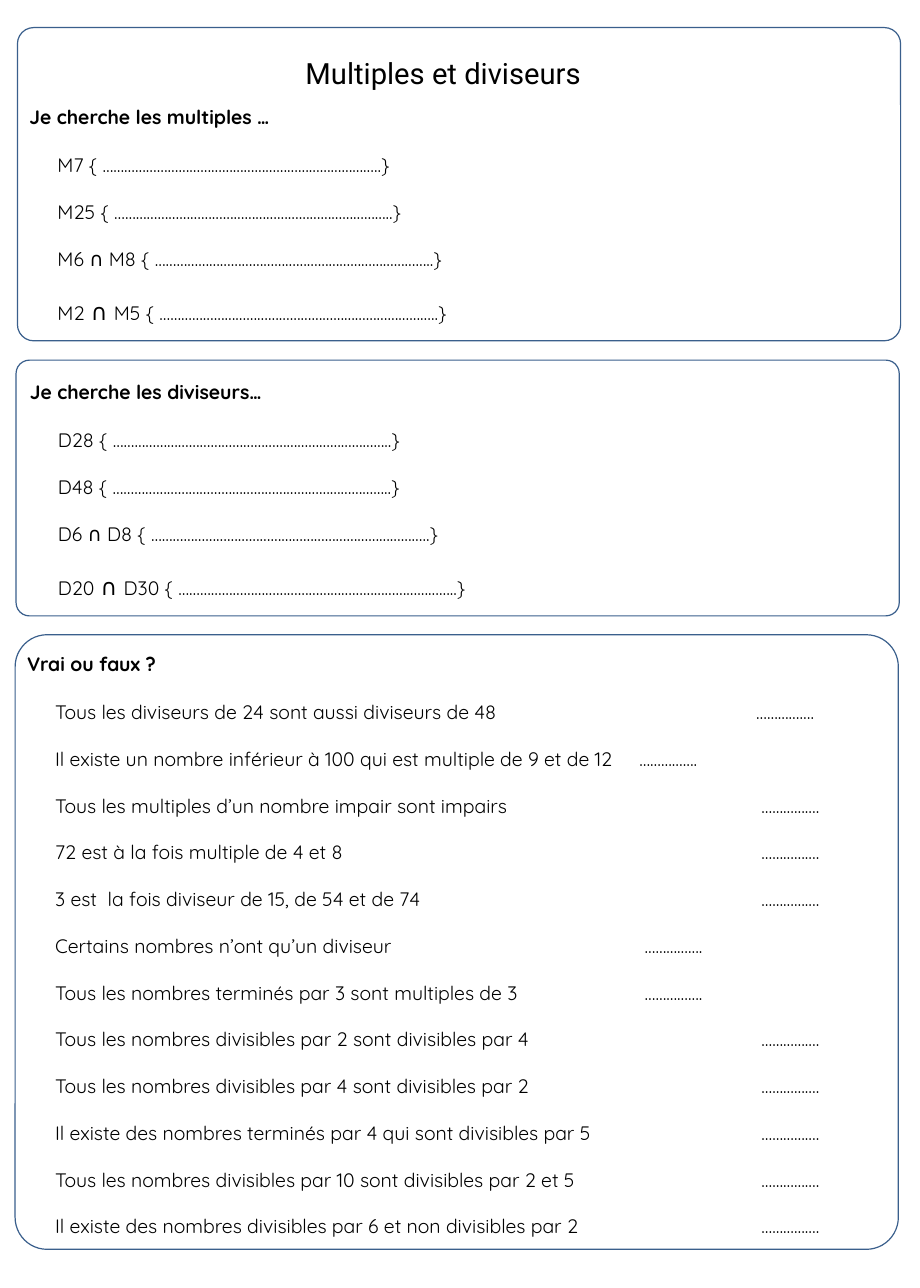
from dataclasses import dataclass

import pptx
import pptx.dml.color
import pptx.enum.shapes
import pptx.enum.text
import pptx.oxml
import pptx.oxml.ns
import pptx.slide
import pptx.text.text
import pptx.util
from pptx.util import Cm

BLACK = pptx.dml.color.RGBColor(0x00, 0x00, 0x00)
BLUE = pptx.dml.color.RGBColor(0x3A, 0x5F, 0x8C)
BODY_FONT = "Quicksand"
TITLE_FONT = "Roboto"
BLANK_LINE = "…" * 25 + ".."
ANSWER = "……………."
INTERSECTION = " ∩ "


@dataclass(frozen=True)
class Area:
    left: float
    top: float
    width: float
    height: float

    def lengths(self) -> tuple[Cm, Cm, Cm, Cm]:
        return Cm(self.left), Cm(self.top), Cm(self.width), Cm(self.height)


@dataclass(frozen=True)
class Row:
    runs: tuple[str, ...]
    tab_inches: int = 0


@dataclass(frozen=True)
class Section:
    frame: Area
    heading: str
    heading_area: Area
    rows: list[Row]
    rows_area: Area


def blank_set(*names: str) -> Row:
    *first, last = names
    return Row((*first, f"{last} {{ {BLANK_LINE}}}"))


def statement(text: str, tab_inches: int = 6, gap: str = " ") -> Row:
    return Row((f"{text}\t{gap}{ANSWER}",), tab_inches)


SECTIONS = [
    Section(
        Area(0.38, 0.6, 19.2, 6.81),
        "Je cherche les multiples …",
        Area(0.39, 2.16, 6.05, 0.76),
        [
            blank_set("M7"),
            blank_set("M25"),
            blank_set("M6 ∩ M8"),
            blank_set("M2", INTERSECTION, "M5"),
        ],
        Area(1.0, 2.7, 14.05, 4.7),
    ),
    Section(
        Area(0.35, 7.83, 19.2, 5.56),
        "Je cherche les diviseurs…",
        Area(0.4, 8.14, 5.84, 0.76),
        [
            blank_set("D28"),
            blank_set("D48"),
            blank_set("D6 ∩ D8"),
            blank_set("D20", INTERSECTION, "D30"),
        ],
        Area(1.01, 8.68, 14.05, 4.7),
    ),
    Section(
        Area(0.33, 13.8, 19.2, 13.36),
        "Vrai ou faux ?",
        Area(0.34, 14.05, 3.35, 0.76),
        [
            statement("Tous les diviseurs de 24 sont aussi diviseurs de 48", gap=""),
            statement("Il existe un nombre inférieur à 100 qui est multiple de 9 et de 12", 5, ""),
            statement("Tous les multiples d’un nombre impair sont impairs"),
            statement("72 est à la fois multiple de 4 et 8"),
            statement("3 est  la fois diviseur de 15, de 54 et de 74"),
            statement("Certains nombres n’ont qu’un diviseur", 5),
            statement("Tous les nombres terminés par 3 sont multiples de 3", 5),
            statement("Tous les nombres divisibles par 2 sont divisibles par 4"),
            statement("Tous les nombres divisibles par 4 sont divisibles par 2"),
            statement("Il existe des nombres terminés par 4 qui sont divisibles par 5"),
            statement("Tous les nombres divisibles par 10 sont divisibles par 2 et 5"),
            statement("Il existe des nombres divisibles par 6 et non divisibles par 2"),
        ],
        Area(0.95, 14.59, 18.29, 12.57),
    ),
]


def add_frame(s: pptx.slide.Slide, area: Area) -> None:
    kind = pptx.enum.shapes.MSO_SHAPE.ROUNDED_RECTANGLE
    sp = s.shapes.add_shape(kind, *area.lengths())
    sp.adjustments[0] = 0.052
    sp.shadow.inherit = False
    sp.fill.background()
    sp.line.color.rgb = BLUE
    sp.line.width = pptx.util.Pt(0.75)


def add_text_frame(s: pptx.slide.Slide, area: Area) -> pptx.text.text.TextFrame:
    tf = s.shapes.add_textbox(*area.lengths()).text_frame
    tf.word_wrap = True
    return tf


def format_run(
    r: pptx.text.text._Run, size: float, name: str = BODY_FONT, bold: bool = False
) -> None:
    r.font.size = pptx.util.Pt(size)
    r.font.name = name
    r.font.bold = bold
    r.font.color.rgb = BLACK


def add_label(
    s: pptx.slide.Slide, area: Area, text: str, size: float, name: str, bold: bool
) -> pptx.text.text.TextFrame:
    tf = add_text_frame(s, area)
    tf.text = text
    format_run(tf.paragraphs[0].runs[0], size, name, bold)
    return tf


def set_tab_stop(p: pptx.text.text._Paragraph, inches: int) -> None:
    position = pptx.util.Inches(inches)
    namespace = pptx.oxml.ns.nsdecls("a")
    xml = f'<a:tabLst {namespace}><a:tab pos="{position}" algn="l"/></a:tabLst>'
    p._p.get_or_add_pPr().append(pptx.oxml.parse_xml(xml))


def add_rows(s: pptx.slide.Slide, area: Area, rows: list[Row]) -> None:
    tf = add_text_frame(s, area)
    for i, row in enumerate(rows):
        p = tf.add_paragraph() if i else tf.paragraphs[0]
        p.line_spacing = 2.0
        if row.tab_inches:
            set_tab_stop(p, row.tab_inches)
        for text in row.runs:
            r = p.add_run()
            r.text = text
            format_run(r, 14 if text == INTERSECTION else 12)


def main() -> None:
    prs = pptx.Presentation()
    prs.slide_width, prs.slide_height = Cm(20), Cm(28)
    s = prs.slides.add_slide(prs.slide_layouts[6])
    for section in SECTIONS:
        add_frame(s, section.frame)
        add_label(s, section.heading_area, section.heading, 12, BODY_FONT, True)
        add_rows(s, section.rows_area, section.rows)
    title_area = Area(3.96, 1.07, 11.35, 1.02)
    tf = add_label(s, title_area, "Multiples et diviseurs", 18, TITLE_FONT, False)
    tf.paragraphs[0].alignment = pptx.enum.text.PP_ALIGN.CENTER
    prs.save("out.pptx")


if __name__ == "__main__":
    main()
